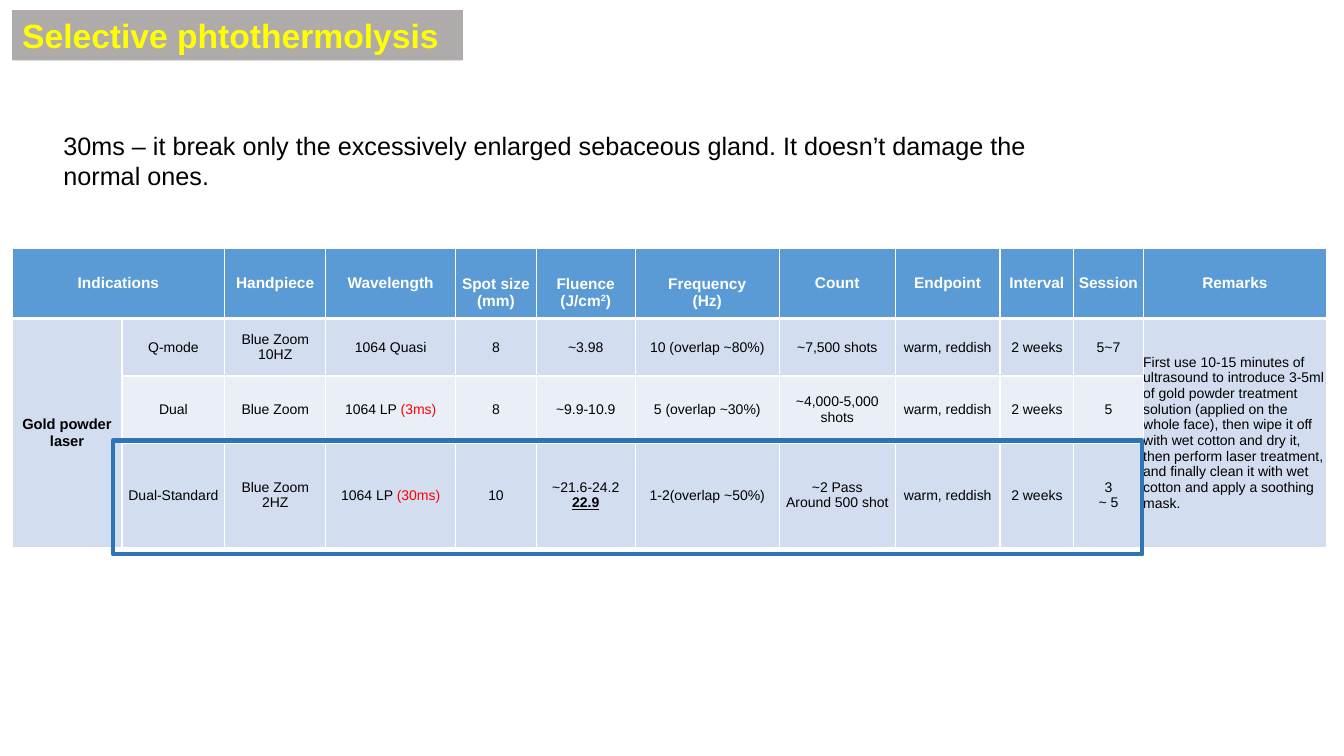
import dataclasses
import typing

import lxml.etree
import pptx
import pptx.dml.color
import pptx.enum.shapes
import pptx.enum.text
import pptx.oxml.ns
import pptx.util

PX = 9144  # EMU; 100 px to the inch
FACE = "Arial"
HEX = {
    "white": "FFFFFF", "black": "000000", "red": "FF0000", "yellow": "FFFF00",
    "grey": "AFABAB", "head": "5B9BD5", "band": "D2DEEF", "pale": "EAEFF7",
    "frame": "2E75B6",
}
WIDTHS = (109, 102, 100, 129, 80, 98, 143, 115, 104, 73, 69, 182)
HEIGHTS = (70, 57, 67, 103)
FILLS = ("head", "band", "pale", "band")
SPANS = (((0, 0), (0, 1)), ((1, 0), (3, 0)), ((1, 11), (3, 11)))
INTERVAL, REMARKS = 9, 11
HEAD = {"size": pptx.util.Pt(11), "bold": True, "color": "white"}
BODY = {"size": pptx.util.Pt(10), "bold": False, "color": "black"}
GROUP = {"size": pptx.util.Pt(10.5), "bold": True, "color": "black"}


@dataclasses.dataclass(frozen=True)
class Run:
    text: str
    look: dict = dataclasses.field(default_factory=dict)
    raised: bool = False


@dataclasses.dataclass(frozen=True)
class Box:
    left: int
    top: int
    width: int
    height: int

    def emu(self) -> tuple[int, ...]:
        return tuple(n * PX for n in dataclasses.astuple(self))


Text = typing.Union[str, tuple[Run, ...], None]
RED = {"color": "red"}
STRONG = {"bold": True, "underline": True}
CARE = ("First use 10-15 minutes of ultrasound to introduce 3-5ml of gold powder "
        "treatment solution (applied on the whole face), then wipe it off with wet "
        "cotton and dry it, then perform laser treatment, and finally clean it with "
        "wet cotton and apply a soothing mask.")
ROWS: tuple[tuple[Text, ...], ...] = (
    ("Indications", None, "Handpiece", "Wavelength", "Spot size\n(mm)",
     (Run("Fluence\n(J/cm"), Run("2", raised=True), Run(")")),
     "Frequency\n(Hz)", "Count", "Endpoint", "Interval", "Session", "Remarks"),
    ("Gold powder laser", "Q-mode", "Blue Zoom\n10HZ", "1064 Quasi", "8", "~3.98",
     "10 (overlap ~80%)", "~7,500 shots", "warm, reddish", "2 weeks", "5~7", CARE),
    (None, "Dual", "Blue Zoom", (Run("1064 LP "), Run("(3ms)", RED)), "8",
     "~9.9-10.9", "5 (overlap ~30%)", "~4,000-5,000\nshots", "warm, reddish",
     "2 weeks", "5", None),
    (None, "Dual-Standard", "Blue Zoom\n2HZ",
     (Run("1064 LP "), Run("(30ms)", RED)), "10",
     (Run("~21.6-24.2\n"), Run("22.9", STRONG)), "1-2(overlap ~50%)",
     "~2 Pass\nAround 500 shot", "warm, reddish", "2 weeks", "3\n~ 5", None),
)


def shade(name: str) -> pptx.dml.color.RGBColor:
    return pptx.dml.color.RGBColor.from_string(HEX[name])


def paint(fill, name: str) -> None:
    fill.solid()
    fill.fore_color.rgb = shade(name)


def style(font, look: dict) -> None:
    for key, value in {"name": FACE, **look}.items():
        if key == "color":
            font.color.rgb = shade(value)
        else:
            setattr(font, key, value)


def write(frame, text: Text, look: dict, align) -> None:
    """Fill a text frame; a newline in any run starts a paragraph."""
    para = frame.paragraphs[0]
    para.alignment = align
    for part in (Run(text),) if isinstance(text, str) else text:
        for num, line in enumerate(part.text.split("\n")):
            if num:
                para = frame.add_paragraph()
                para.alignment = align
            if line:
                run = para.add_run()
                run.text = line
                style(run.font, {**look, **part.look})
                if part.raised:
                    run.font._element.set("baseline", "30000")


def edge(cell, row: int) -> None:
    """White cell borders, heavy under the header row."""
    tag = pptx.oxml.ns.qn
    props = cell._tc.get_or_add_tcPr()
    heavy = {(0, "B"), (1, "T")}
    for side in "LRTB":
        width = 3 if (row, side) in heavy else 1
        line = lxml.etree.SubElement(props, tag(f"a:ln{side}"),
                                     w=str(pptx.util.Pt(width)))
        solid = lxml.etree.SubElement(line, tag("a:solidFill"))
        lxml.etree.SubElement(solid, tag("a:srgbClr"), val=HEX["white"])


def inset(row: int, col: int, text: Text) -> tuple[int, int, int, int]:
    """Left, top, right and bottom margins of a cell in px."""
    if (row, col) == (1, 0):
        return 10, 5, 10, 5
    side = 7 if col == INTERVAL else 0
    lines = "".join(r.text for r in text) if isinstance(text, tuple) else text
    lower = 18 if row == 0 and "\n" in lines else 0
    return side, lower, side, 0


def grid(slide, box: Box) -> None:
    table = slide.shapes.add_table(len(ROWS), len(WIDTHS), *box.emu()).table
    table.horz_banding = False
    for col, width in zip(table.columns, WIDTHS):
        col.width = width * PX
    for row, height in zip(table.rows, HEIGHTS):
        row.height = height * PX
    for first, last in SPANS:
        table.cell(*first).merge(table.cell(*last))
    align = pptx.enum.text.PP_ALIGN
    for row, texts in enumerate(ROWS):
        for col, text in enumerate(texts):
            cell = table.cell(row, col)
            edge(cell, row)
            paint(cell.fill, FILLS[row])
            if text is None:
                continue
            cell.vertical_anchor = pptx.enum.text.MSO_ANCHOR.MIDDLE
            for side, gap in zip(("left", "top", "right", "bottom"),
                                 inset(row, col, text)):
                setattr(cell, f"margin_{side}", gap * PX)
            look = HEAD if row == 0 else GROUP if col == 0 else BODY
            left = row > 0 and col == REMARKS
            write(cell.text_frame, text, look, align.LEFT if left else align.CENTER)


def title(slide, box: Box) -> None:
    shape = slide.shapes.title
    for key, value in zip(("left", "top", "width", "height"), box.emu()):
        setattr(shape, key, value)
    paint(shape.fill, "grey")
    frame = shape.text_frame
    frame.auto_size = pptx.enum.text.MSO_AUTO_SIZE.NONE
    frame.vertical_anchor = pptx.enum.text.MSO_ANCHOR.MIDDLE
    write(frame, "Selective phtothermolysis",
          {"size": pptx.util.Pt(24), "bold": True, "color": "yellow"},
          pptx.enum.text.PP_ALIGN.LEFT)


def note(slide, box: Box) -> None:
    frame = slide.shapes.add_textbox(*box.emu()).text_frame
    frame.word_wrap = True
    write(frame, "30ms – it break only the excessively enlarged sebaceous gland. "
          "It doesn’t damage the normal ones.",
          {"size": pptx.util.Pt(18), "color": "black"},
          pptx.enum.text.PP_ALIGN.LEFT)


def outline(slide, box: Box) -> None:
    kind = pptx.enum.shapes.MSO_SHAPE.RECTANGLE
    shape = slide.shapes.add_shape(kind, *box.emu())
    shape.shadow.inherit = False
    shape.fill.background()
    shape.line.color.rgb = shade("frame")
    shape.line.width = pptx.util.Pt(3)


def main() -> None:
    deck = pptx.Presentation()
    deck.slide_width, deck.slide_height = 1333 * PX, 750 * PX
    slide = deck.slides.add_slide(deck.slide_layouts.get_by_name("Title Only"))
    title(slide, Box(12, 10, 447, 50))
    note(slide, Box(53, 124, 991, 101))
    grid(slide, Box(12, 246, sum(WIDTHS), sum(HEIGHTS)))
    outline(slide, Box(112, 437, 1021, 113))
    deck.save("out.pptx")


if __name__ == "__main__":
    main()
